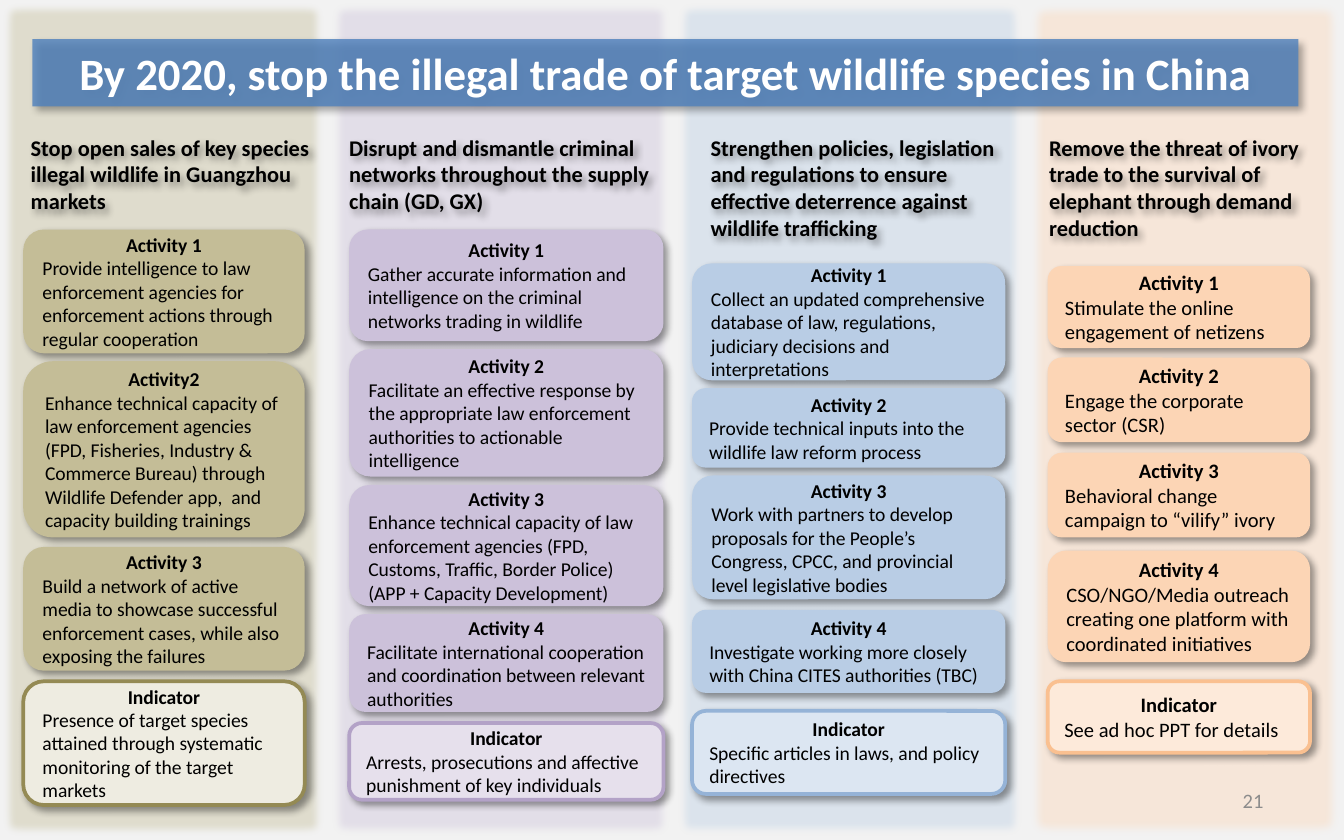
"""Build the four-strand wildlife trade strategy slide."""
from lxml import etree
from pptx import Presentation
from pptx.dml.color import RGBColor
from pptx.enum import shapes, text
from pptx.oxml import ns
from pptx.util import Cm, Pt

THEME = {
    "font": "Calibri", "back": "F2F2F2", "ink": "000000", "pale": "FFFFFF",
    "bar": "4F81BD", "mute": "8C8C8C",
    "title": 24, "head": 12, "page": 11, "edge": 2,
}
TITLE = "By 2020, stop the illegal trade of target wildlife species in China"
PAGE = "21"
HEAD_TOP = 2.44
STRANDS = [
    {
        "head": "Stop open sales of key species illegal wildlife in Guangzhou markets",
        "panel": (0, 6.2), "label": (0.33, 5.84, 1.7), "card": (0.44, 5.32),
        "fill": "C4BD97", "light": "EEECE1", "line": "948A54", "size": 10.5,
        "cards": [
            (4.34, 2.34, "Activity 1", "Provide intelligence to law enforcement agencies for "
             "enforcement actions through regular cooperation"),
            (6.83, 3.33, "Activity2", "Enhance technical capacity of law enforcement agencies "
             "(FPD, Fisheries, Industry & Commerce Bureau) through Wildlife Defender app,  and "
             "capacity building trainings"),
            (10.34, 2.34, "Activity 3", "Build a network of active media to showcase successful "
             "enforcement cases, while also exposing the failures"),
            (12.88, 2.34, "Indicator", "Presence of target species attained through systematic "
             "monitoring of the target markets"),
        ],
    },
    {
        "head": "Disrupt and dismantle criminal networks throughout the supply chain (GD, GX)",
        "panel": (6.2, 6.53), "label": (6.35, 6.38, 1.7), "card": (6.6, 5.94),
        "fill": "CCC1DA", "light": "E6E0EC", "line": "B3A2C7", "size": 10.5,
        "cards": [
            (4.34, 2.11, "Activity 1", "Gather accurate information and intelligence on the "
             "criminal networks trading in wildlife"),
            (6.6, 2.41, "Activity 2", "Facilitate an effective response by the appropriate law "
             "enforcement authorities to actionable intelligence"),
            (9.17, 2.29, "Activity 3", "Enhance technical capacity of law enforcement agencies "
             "(FPD, Customs, Traffic, Border Police) (APP + Capacity Development)"),
            (11.61, 1.85, "Activity 4", "Facilitate international cooperation and coordination "
             "between relevant authorities"),
            (13.67, 1.45, "Indicator", "Arrests, prosecutions and affective punishment of key "
             "individuals"),
        ],
    },
    {
        "head": "Strengthen policies, legislation and regulations to ensure effective "
                "deterrence against wildlife trafficking",
        "panel": (12.75, 6.63), "label": (13.18, 6.22, 2.21), "card": (13.08, 5.92),
        "fill": "B9CDE5", "light": "DCE6F2", "line": "95B3D7", "size": 10.5,
        "cards": [
            (4.98, 2.21, "Activity 1", "Collect an updated comprehensive database of law, "
             "regulations, judiciary decisions and interpretations"),
            (7.34, 1.5, "Activity 2", "Provide technical inputs into the wildlife law reform "
             "process"),
            (8.99, 2.34, "Activity 3", "Work with partners to develop proposals for the People’s "
             "Congress, CPCC, and provincial level legislative bodies"),
            (11.53, 1.57, "Activity 4", "Investigate working more closely with China CITES "
             "authorities (TBC)"),
            (13.44, 1.57, "Indicator", "Specific articles in laws, and policy directives"),
        ],
    },
    {
        "head": "Remove the threat of ivory trade to the survival of elephant through "
                "demand reduction",
        "panel": (19.41, 5.99), "label": (19.58, 5.38, 2.21), "card": (19.8, 4.96),
        "fill": "FCD5B5", "light": "FDEADA", "line": "FAC090", "size": 11,
        "cards": [
            (5.03, 1.55, "Activity 1", "Stimulate the online engagement of netizens"),
            (6.76, 1.6, "Activity 2", "Engage the corporate sector (CSR)"),
            (8.56, 1.6, "Activity 3", "Behavioral change campaign to “vilify” ivory"),
            (10.41, 2.11, "Activity 4", "CSO/NGO/Media outreach creating one platform with "
             "coordinated initiatives"),
            (12.88, 1.35, "Indicator", "See ad hoc PPT for details"),
        ],
    },
]
LEFT, MID, RIGHT = text.PP_ALIGN.LEFT, text.PP_ALIGN.CENTER, text.PP_ALIGN.RIGHT
RECT, ROUND = shapes.MSO_SHAPE.RECTANGLE, shapes.MSO_SHAPE.ROUNDED_RECTANGLE


def node(root, tag, **attrs):
    return etree.SubElement(root, ns.qn("a:" + tag), attrs)


def paint(shape, fill, alpha=None):
    shape.fill.solid()
    shape.fill.fore_color.rgb = RGBColor.from_string(fill)
    if alpha:
        color = shape.fill._xPr.find(".//" + ns.qn("a:srgbClr"))
        node(color, "alpha", val=str(alpha * 1000))


def effect(shape, kind, **attrs):
    shape.shadow.inherit = False
    root = shape._element.spPr.find(ns.qn("a:effectLst"))
    return node(root, kind, **attrs)


def shade(shape):
    drop = effect(shape, "outerShdw", blurRad=str(Pt(4)), dist=str(Pt(3)),
                  dir="2700000", algn="tl", rotWithShape="0")
    node(node(drop, "srgbClr", val="000000"), "alpha", val="40000")


def write(shape, rows, size, color="ink"):
    frame = shape.text_frame
    frame.word_wrap = True
    frame.auto_size = text.MSO_AUTO_SIZE.NONE
    frame.vertical_anchor = text.MSO_ANCHOR.MIDDLE
    for i, (words, align, bold) in enumerate(rows):
        para = frame.add_paragraph() if i else frame.paragraphs[0]
        para.text = words
        para.alignment = align
        for run in para.runs:
            run.font.name = THEME["font"]
            run.font.size = Pt(size)
            run.font.bold = bold
            run.font.color.rgb = RGBColor.from_string(THEME[color])


def block(slide, kind, box, fill, alpha=None):
    shape = slide.shapes.add_shape(kind, *map(Cm, box))
    paint(shape, fill, alpha)
    shape.line.fill.background()
    return shape


def label(slide, box, words, align, bold, size, color="ink"):
    shape = slide.shapes.add_textbox(*map(Cm, box))
    write(shape, [(words, align, bold)], size, color)
    return shape


def strand(slide, data):
    left, wide = data["panel"]
    panel = block(slide, RECT, (left, 0, wide, 15.88), data["fill"], 40)
    effect(panel, "softEdge", rad="63500")
    left, wide, high = data["label"]
    shade(label(slide, (left, HEAD_TOP, wide, high), data["head"], LEFT, True, THEME["head"]))
    left, wide = data["card"]
    for top, high, name, words in data["cards"]:
        goal = name == "Indicator"
        card = block(slide, ROUND, (left, top, wide, high), data["light" if goal else "fill"])
        if goal:
            card.line.color.rgb = RGBColor.from_string(data["line"])
            card.line.width = Pt(THEME["edge"])
        shade(card)
        write(card, [(name, MID, True), (words, LEFT, False)], data["size"])


def banner(slide):
    bar = slide.shapes.title
    bar.left, bar.top, bar.width, bar.height = map(Cm, (0.61, 0.74, 23.93, 1.27))
    node(node(bar._element.spPr, "prstGeom", prst="roundRect"), "avLst")
    paint(bar, THEME["bar"], 81)
    shade(bar)
    write(bar, [(TITLE, MID, True)], THEME["title"], "pale")
    slide.shapes._spTree.append(bar._element)


def main():
    deck = Presentation()
    deck.slide_width, deck.slide_height = Cm(25.4), Cm(15.88)
    slide = deck.slides.add_slide(deck.slide_layouts[5])
    paint(slide.background, THEME["back"])
    for data in STRANDS:
        strand(slide, data)
    banner(slide)
    label(slide, (18.21, 14.71, 5.92, 0.84), PAGE, RIGHT, False, THEME["page"], "mute")
    deck.save("out.pptx")


if __name__ == "__main__":
    main()
